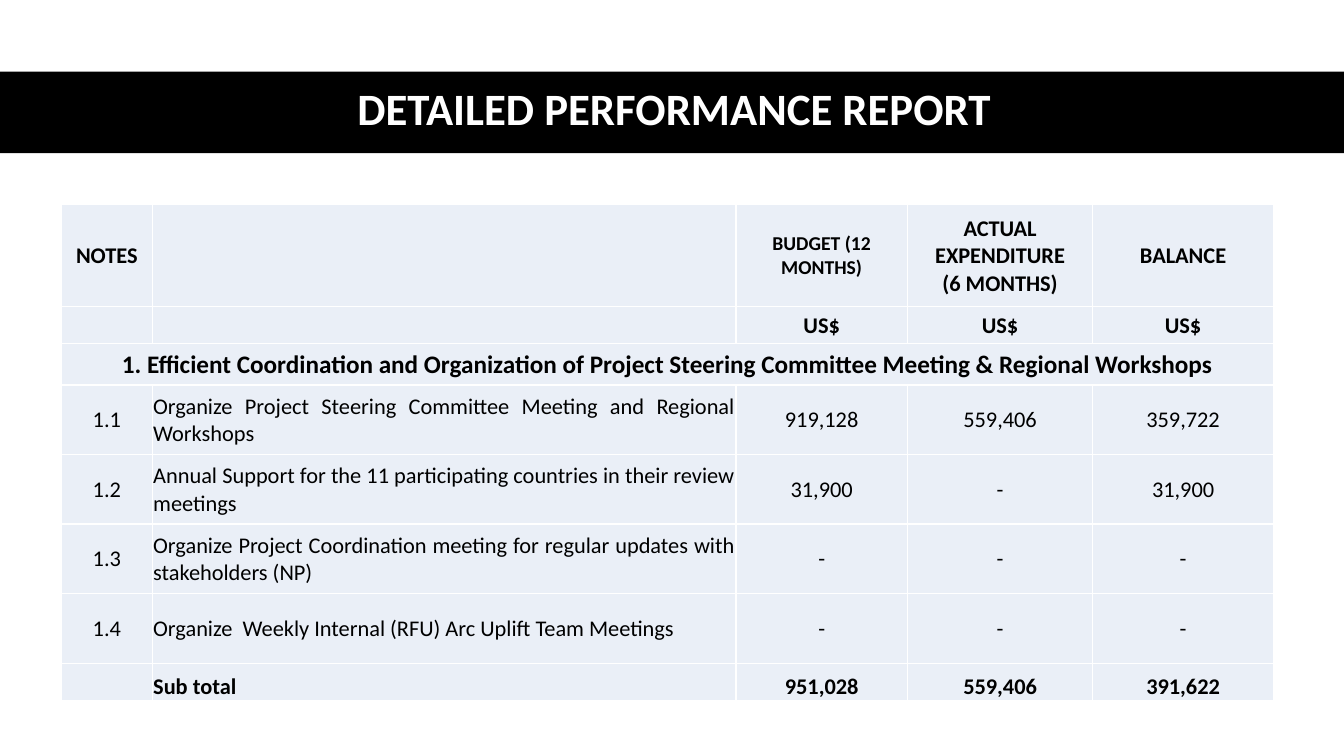
from typing import NamedTuple

from lxml import etree
from pptx import Presentation
from pptx import util as u
from pptx.dml.color import RGBColor
from pptx.enum import shapes, text
from pptx.oxml import ns

BLACK = RGBColor(0x00, 0x00, 0x00)
WHITE = RGBColor(0xFF, 0xFF, 0xFF)
PALE_BLUE = RGBColor(0xEA, 0xEF, 0xF7)
FONT = "Calibri"
CENTER = text.PP_ALIGN.CENTER
JUSTIFY = text.PP_ALIGN.JUSTIFY
LEFT = text.PP_ALIGN.LEFT
MIDDLE = text.MSO_ANCHOR.MIDDLE
BOTTOM = text.MSO_ANCHOR.BOTTOM

COLUMN_WIDTHS = (0.9, 5.79, 1.7, 1.84, 1.79)
BUDGET_COLUMN = 2


class ReportRow(NamedTuple):
    height: float
    cells: tuple[str, ...]
    size: int = 16
    bold: bool = False
    label_align: text.PP_ALIGN = JUSTIFY
    anchor: text.MSO_ANCHOR = MIDDLE
    merged: bool = False


ROWS = (
    ReportRow(1.01, ("NOTES", "", "BUDGET (12 MONTHS)",
                     "ACTUAL EXPENDITURE\n(6 MONTHS)", "BALANCE"), bold=True),
    ReportRow(0.37, ("", "", "US$", "US$", "US$"), bold=True),
    ReportRow(0.41, ("1. Efficient Coordination and Organization of Project Steering "
                     "Committee Meeting & Regional Workshops", "", "", "", ""),
              size=18, bold=True, merged=True),
    ReportRow(0.69, ("1.1", "Organize Project Steering Committee Meeting and Regional "
                     "Workshops", "919,128", "559,406", "359,722")),
    ReportRow(0.69, ("1.2", "Annual Support for the 11 participating countries in their "
                     "review meetings", "31,900", "-", "31,900")),
    ReportRow(0.69, ("1.3", "Organize Project Coordination meeting for regular updates "
                     "with stakeholders (NP)", "-", "-", "-")),
    ReportRow(0.69, ("1.4", "Organize  Weekly Internal (RFU) Arc Uplift Team Meetings",
                     "-", "-", "-")),
    ReportRow(0.37, ("", "Sub total", "951,028", "559,406", "391,622"),
              bold=True, label_align=LEFT, anchor=BOTTOM),
)


def add_span(para, words: str, size: int, color: RGBColor, bold: bool) -> None:
    span = para.add_run()
    span.text = words
    span.font.name = FONT
    span.font.size = u.Pt(size)
    span.font.bold = bold
    span.font.color.rgb = color


def add_borders(cell) -> None:
    properties = cell._tc.get_or_add_tcPr()
    for side in ("lnL", "lnR", "lnT", "lnB"):
        line = etree.SubElement(properties, ns.qn(f"a:{side}"), w=str(u.Pt(1)))
        fill = etree.SubElement(line, ns.qn("a:solidFill"))
        etree.SubElement(fill, ns.qn("a:srgbClr"), val=str(WHITE))


def style_cell(cell, anchor: text.MSO_ANCHOR) -> None:
    add_borders(cell)
    cell.fill.solid()
    cell.fill.fore_color.rgb = PALE_BLUE
    cell.margin_left = cell.margin_right = cell.margin_top = u.Inches(0.01)
    cell.margin_bottom = 0
    cell.vertical_anchor = anchor


def write_cell(cell, words: str, align: text.PP_ALIGN, size: int, bold: bool) -> None:
    para = cell.text_frame.paragraphs[0]
    para.alignment = align
    for index, line in enumerate(words.split("\n")):
        if index:
            para.add_line_break()
        add_span(para, line, size, BLACK, bold)


def add_title(page) -> None:
    band = page.shapes.add_shape(shapes.MSO_SHAPE.RECTANGLE, 0, u.Inches(0.71),
                                 u.Inches(13.33), u.Inches(0.81))
    band.shadow.inherit = False
    band.fill.solid()
    band.fill.fore_color.rgb = BLACK
    band.line.fill.background()

    box = page.shapes.add_textbox(u.Inches(0.61), u.Inches(0.7),
                                  u.Inches(12.26), u.Inches(0.81))
    box.text_frame.word_wrap = True
    box.text_frame.vertical_anchor = MIDDLE
    para = box.text_frame.paragraphs[0]
    para.alignment = CENTER
    para.line_spacing = 0.9
    para.space_after = u.Pt(6)
    add_span(para, "DETAILED PERFORMANCE REPORT ", 32, WHITE, True)


def add_report(page) -> None:
    frame = page.shapes.add_table(
        len(ROWS), len(COLUMN_WIDTHS), u.Inches(0.61), u.Inches(2.03),
        u.Inches(sum(COLUMN_WIDTHS)), u.Inches(sum(row.height for row in ROWS)))
    table = frame.table
    table.first_row = table.horz_banding = False
    for column, width in zip(table.columns, COLUMN_WIDTHS):
        column.width = u.Inches(width)
    for r, row in enumerate(ROWS):
        table.rows[r].height = u.Inches(row.height)
        for c, words in enumerate(row.cells):
            cell = table.cell(r, c)
            style_cell(cell, row.anchor)
            if words:
                align = row.label_align if c == 1 else CENTER
                size = 14 if (r, c) == (0, BUDGET_COLUMN) else row.size
                write_cell(cell, words, align, size, row.bold)
        if row.merged:
            table.cell(r, 0).merge(table.cell(r, len(COLUMN_WIDTHS) - 1))


def main() -> None:
    deck = Presentation()
    deck.slide_width = u.Inches(13.33)
    deck.slide_height = u.Inches(7.5)
    page = deck.slides.add_slide(deck.slide_layouts[6])
    add_title(page)
    add_report(page)
    deck.save("out.pptx")


if __name__ == "__main__":
    main()
